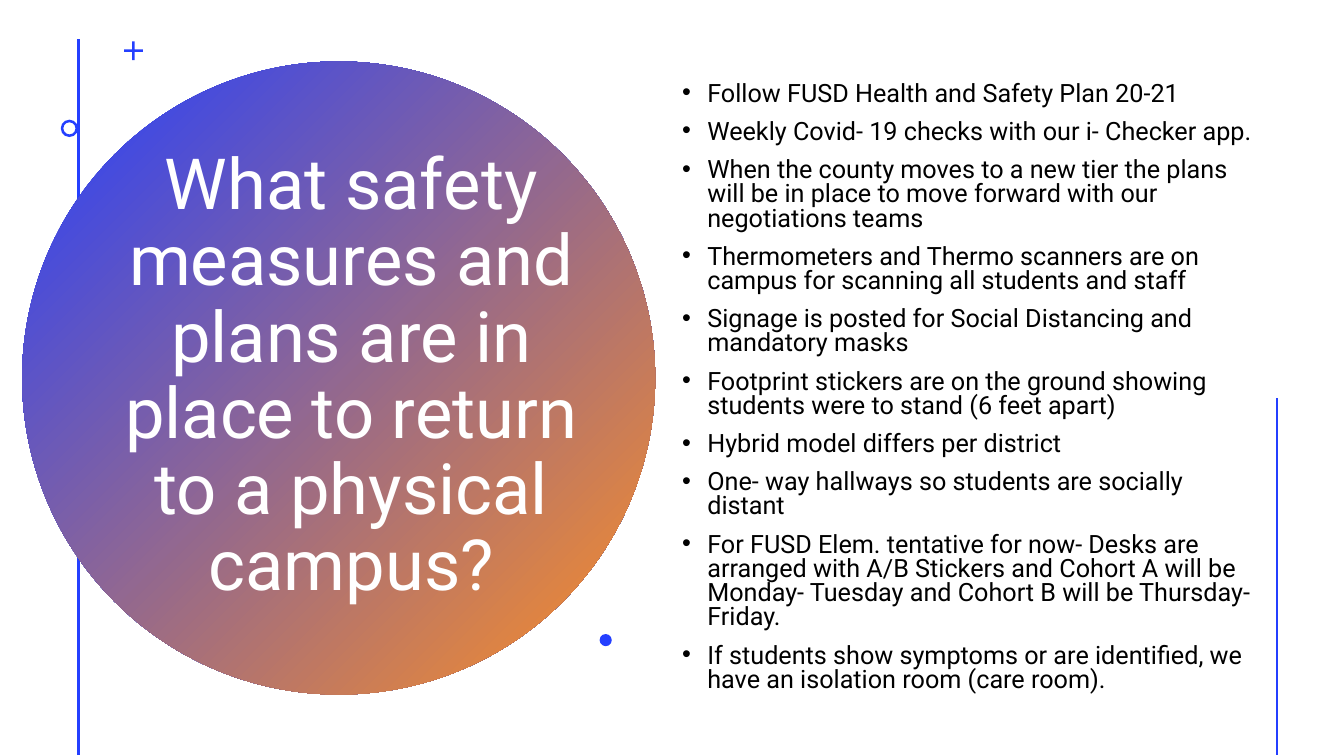
import pptx
import pptx.dml.color
import pptx.enum.shapes
import pptx.enum.text
import pptx.oxml.ns
import pptx.util
from lxml import etree

Pt = pptx.util.Pt
RGBColor = pptx.dml.color.RGBColor
SHAPE = pptx.enum.shapes.MSO_SHAPE
ALIGN = pptx.enum.text.PP_ALIGN
qn = pptx.oxml.ns.qn

BLUE = RGBColor(0x24, 0x3F, 0xFF)
ORANGE = RGBColor(0xFF, 0x90, 0x22)
WHITE = RGBColor(0xFF, 0xFF, 0xFF)
BLACK = RGBColor(0, 0, 0)
FONT = "Roboto"

TITLE = "What safety measures and plans are in place to return to a physical campus?"
POINTS = [
    "Follow FUSD Health and Safety Plan 20-21",
    "Weekly Covid- 19 checks with our i- Checker app.",
    "When the county moves to a new tier the plans will be in place to move forward "
    "with our negotiations teams",
    "Thermometers and Thermo scanners are on campus for scanning all students and staff",
    "Signage is posted for Social Distancing and mandatory masks",
    "Footprint stickers are on the ground showing students were to stand (6 feet apart)",
    "Hybrid model differs per district",
    "One- way hallways so students are socially distant",
    "For FUSD Elem. tentative for now- Desks are arranged with A/B Stickers and Cohort A "
    "will be Monday- Tuesday and Cohort B will be Thursday- Friday.",
    "If students show symptoms or are identified, we have an isolation room (care room).",
]


def add_line(slide, x, top, bottom):
    line = slide.shapes.add_connector(
        pptx.enum.shapes.MSO_CONNECTOR.STRAIGHT, Pt(x), Pt(top), Pt(x), Pt(bottom))
    line.line.color.rgb = BLUE
    line.line.width = Pt(2)
    props = line._element.find(qn("p:spPr"))
    etree.SubElement(props, qn("a:effectLst"))


def add_mark(slide, kind, left, top, size, adjust=None):
    """Add a blue shape, as wide as it is high, without outline."""
    mark = slide.shapes.add_shape(kind, Pt(left), Pt(top), Pt(size), Pt(size))
    mark.shadow.inherit = False
    mark.fill.solid()
    mark.fill.fore_color.rgb = BLUE
    mark.line.fill.background()
    if adjust is not None:
        mark.adjustments[0] = adjust
    return mark


def add_disc(slide, left, top, size):
    """Add the large circle that fades from blue to orange."""
    disc = add_mark(slide, SHAPE.OVAL, left, top, size)
    disc.fill.gradient()
    disc.fill.gradient_angle = 315
    for stop, color in zip(disc.fill.gradient_stops, (BLUE, ORANGE)):
        stop.color.rgb = color


def set_bullet(para, indent):
    props = para._p.get_or_add_pPr()
    props.set("marL", str(Pt(indent)))
    props.set("indent", str(-Pt(indent)))
    font = etree.SubElement(props, qn("a:buFont"))
    font.set("typeface", "Arial")
    mark = etree.SubElement(props, qn("a:buChar"))
    mark.set("char", "•")


def add_text(slide, lines, left, top, width, height, *, size, color,
             align=ALIGN.LEFT, spacing=1.0, before=0, indent=0):
    """Add a text box, one paragraph a line; an indent gives bullets."""
    box = slide.shapes.add_textbox(Pt(left), Pt(top), Pt(width), Pt(height))
    frame = box.text_frame
    frame.word_wrap = True
    frame.vertical_anchor = pptx.enum.text.MSO_ANCHOR.MIDDLE
    for i, text in enumerate(lines):
        para = frame.paragraphs[0] if i == 0 else frame.add_paragraph()
        para.alignment = align
        para.line_spacing = spacing
        para.space_before = Pt(before)
        if indent:
            set_bullet(para, indent)
        run = para.add_run()
        run.text = text
        run.font.name = FONT
        run.font.size = Pt(size)
        run.font.color.rgb = color


def main():
    deck = pptx.Presentation()
    deck.slide_width = Pt(960)
    deck.slide_height = Pt(540)
    slide = deck.slides.add_slide(deck.slide_layouts[6])

    add_line(slide, 56.2, 28, 539.3)
    add_disc(slide, 15.8, 43.9, 452.2)
    add_text(slide, [TITLE], 77.8, 101.5, 346.3, 336.2, size=50.4, color=WHITE,
             align=ALIGN.CENTER, spacing=0.9)
    add_mark(slide, SHAPE.CROSS, 88.6, 29.5, 13.4, 0.43)
    add_mark(slide, SHAPE.DONUT, 43.4, 85.5, 12.4, 0.15)
    add_text(slide, POINTS, 480.2, 30.2, 422.6, 493.9, size=18, color=BLACK,
             spacing=0.8, before=10, indent=18)
    add_mark(slide, SHAPE.OVAL, 428.3, 452.9, 8.7)
    add_line(slide, 912.2, 284.4, 539.3)

    deck.save("out.pptx")


if __name__ == "__main__":
    main()
